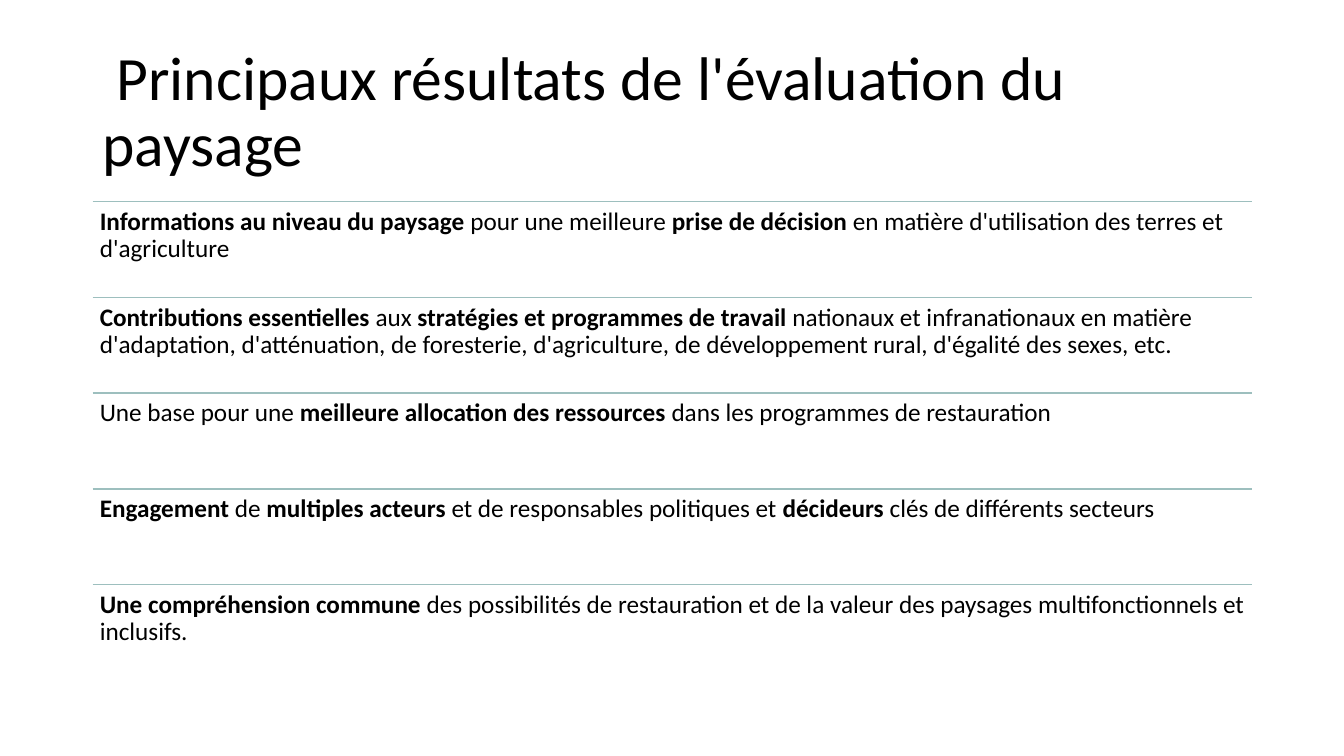
from lxml import etree
from pptx import Presentation
from pptx.dml.color import RGBColor
from pptx.enum.shapes import MSO_CONNECTOR
from pptx.enum.text import MSO_ANCHOR
from pptx.oxml.ns import qn
from pptx.util import Emu, Pt

STRAIGHT = MSO_CONNECTOR.STRAIGHT
TOP = MSO_ANCHOR.TOP
MIDDLE = MSO_ANCHOR.MIDDLE
PX = 9144
LEFT, WIDTH = 92, 1150
FIRST_ROW, ROW_HEIGHT = 200, 95

RESULTS = [
    "*Informations au niveau du paysage *pour une meilleure *prise de décision *"
    "en matière d'utilisation des terres et d'agriculture",
    "*Contributions essentielles *aux *stratégies et programmes de travail *"
    "nationaux et infranationaux en matière d'adaptation, d'atténuation, de foresterie, "
    "d'agriculture, de développement rural, d'égalité des sexes, etc.",
    "Une base pour une *meilleure allocation des ressources *"
    "dans les programmes de restauration",
    "*Engagement *de *multiples acteurs *et de responsables politiques et "
    "*décideurs* clés de différents secteurs",
    "*Une compréhension commune *des possibilités de restauration et de la valeur "
    "des paysages multifonctionnels et inclusifs.",
]


def color(value):
    return RGBColor.from_string(value)


def add_text(text, top, height, size, margins, anchor=TOP, space_after=0):
    box = slide.shapes.add_textbox(LEFT * PX, top * PX, WIDTH * PX, height * PX)
    frame = box.text_frame
    frame.word_wrap = True
    frame.vertical_anchor = anchor
    frame.margin_left = frame.margin_right = margins[0] * PX
    frame.margin_top = frame.margin_bottom = margins[1] * PX
    paragraph = frame.paragraphs[0]
    paragraph.line_spacing = 0.9
    paragraph.space_after = Pt(space_after)
    for index, part in enumerate(text.split("*")):
        if part:
            run = paragraph.add_run()
            run.text = part
            run.font.name = "Calibri"
            run.font.size = Pt(size)
            run.font.bold = index % 2 == 1
            run.font.color.rgb = color("000000")


presentation = Presentation()
presentation.slide_width = Emu(1333 * PX)
presentation.slide_height = Emu(750 * PX)
slide = presentation.slides.add_slide(presentation.slide_layouts[6])

add_text(" Principaux résultats de l'évaluation du paysage", top=40, height=145,
         size=44, margins=(10, 5), anchor=MIDDLE)

for row, result in enumerate(RESULTS):
    top = FIRST_ROW + row * ROW_HEIGHT
    divider = slide.shapes.add_connector(
        STRAIGHT, LEFT * PX, top * PX, (LEFT + WIDTH) * PX, top * PX)
    divider.line.color.rgb = color("9DBFBE")
    divider.line.width = Pt(1)
    etree.SubElement(divider._element.spPr, qn("a:effectLst"))
    add_text(result, top=top, height=ROW_HEIGHT, size=18, margins=(7, 7), space_after=6)

presentation.save("out.pptx")
